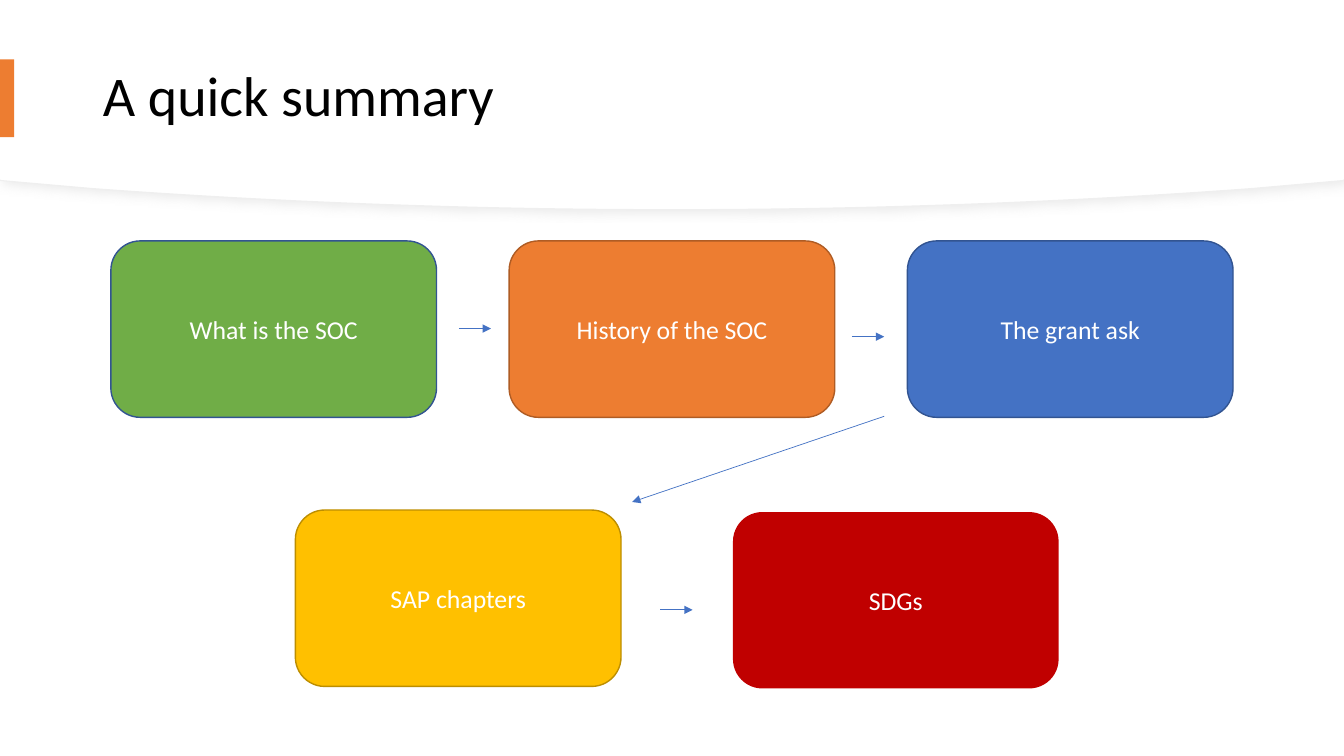
from lxml import etree
from pptx import Presentation
from pptx import util as u
from pptx.dml.color import RGBColor
from pptx.enum import shapes, text
from pptx.oxml.ns import qn

COLORS = {
    "white": "FFFFFF", "black": "000000", "edge": "EFEFEF", "shade": "D9D9D9",
    "orange": "ED7D31", "rust": "AF5C24", "green": "70AD47", "blue": "4472C4",
    "navy": "325491", "gold": "FFC000", "bronze": "BD8E00", "red": "C00000",
}
FONT = "Calibri"
WIDTH, HEIGHT = 13.33, 7.5
CARD_WIDTH, CARD_HEIGHT = 3.23, 1.75
COLUMN_LEFT, COLUMN_STEP = 1.1, 3.95
TOP_ROW, LOWER_ROW = 2.39, 5.06
CURVE_STEPS = 24


def color(name):
    return RGBColor.from_string(COLORS[name])


def paint(shape, fill, line=None, weight=1):
    shape.shadow.inherit = False
    shape.fill.solid()
    shape.fill.fore_color.rgb = color(fill)
    if line:
        shape.line.color.rgb = color(line)
        shape.line.width = u.Pt(weight)
    else:
        shape.line.fill.background()


def write(para, words, size, ink):
    span = para.add_run()
    span.text = words
    span.font.name = FONT
    span.font.size = u.Pt(size)
    span.font.color.rgb = color(ink)


def bezier(points):
    for step in range(1, CURVE_STEPS + 1):
        t = step / CURVE_STEPS
        weights = ((1 - t) ** 3, 3 * t * (1 - t) ** 2, 3 * t * t * (1 - t), t ** 3)
        yield tuple(sum(w * p[axis] for w, p in zip(weights, points)) for axis in (0, 1))


def add_header(page, depth):
    middle = (WIDTH / 2, depth)
    shoulder = (12.42, depth - 0.21)
    right = [shoulder, (10.65, depth - 0.08), (8.71, depth), middle]
    half = [(WIDTH, 0), (WIDTH, depth - 0.29), shoulder, *bezier(right)]
    mirrored = [(WIDTH - x, y) for x, y in reversed(half[:-1])]
    outline = [(u.Inches(x), u.Inches(y)) for x, y in half + mirrored]
    builder = page.shapes.build_freeform(*outline[0])
    builder.add_line_segments(outline[1:], close=True)
    header = builder.convert_to_shape()
    page.shapes.title.element.addprevious(header.element)
    return header


def add_soft_shadow(shape):
    effects = shape.element.spPr.find(qn("a:effectLst"))
    shadow = etree.SubElement(
        effects, qn("a:outerShdw"), blurRad=str(u.Pt(7)), dist=str(u.Pt(3)),
        dir="2700000", algn="tl", rotWithShape="0")
    tint = etree.SubElement(shadow, qn("a:srgbClr"), val=COLORS["shade"])
    etree.SubElement(tint, qn("a:alpha"), val="50000")


def add_title(page, words):
    title = page.shapes.title
    title.left, title.top = u.Inches(0.92), u.Inches(0.28)
    title.width, title.height = u.Inches(11.5), u.Inches(1.39)
    title.text_frame.vertical_anchor = text.MSO_ANCHOR.MIDDLE
    para = title.text_frame.paragraphs[0]
    para.alignment = text.PP_ALIGN.LEFT
    para.line_spacing = 0.9
    write(para, words, 40, "black")


def add_block(page, kind, left, top, width, height):
    return page.shapes.add_shape(kind, *map(u.Inches, (left, top, width, height)))


def add_card(page, left, top, words, fill, line):
    card = add_block(page, shapes.MSO_SHAPE.ROUNDED_RECTANGLE,
                     left, top, CARD_WIDTH, CARD_HEIGHT)
    paint(card, fill, line)
    card.text_frame.word_wrap = True
    card.text_frame.vertical_anchor = text.MSO_ANCHOR.MIDDLE
    para = card.text_frame.paragraphs[0]
    para.alignment = text.PP_ALIGN.CENTER
    para.space_after = u.Pt(6)
    write(para, words, 18.4, "white")


def add_arrow(page, start, end):
    arrow = page.shapes.add_connector(
        shapes.MSO_CONNECTOR.STRAIGHT, *map(u.Inches, (*start, *end)))
    arrow.line.color.rgb = color("blue")
    arrow.line.width = u.Pt(0.5)
    properties = arrow.element.spPr
    etree.SubElement(properties.find(qn("a:ln")), qn("a:tailEnd"), type="triangle")
    etree.SubElement(properties, qn("a:effectLst"))


def main():
    deck = Presentation()
    deck.slide_width, deck.slide_height = u.Inches(WIDTH), u.Inches(HEIGHT)
    page = deck.slides.add_slide(deck.slide_layouts[5])

    rim = add_header(page, 2.08)
    paint(rim, "white", "edge", 0.75)
    add_soft_shadow(rim)
    paint(add_header(page, 2.07), "white")
    add_title(page, "A quick summary")
    paint(add_block(page, shapes.MSO_SHAPE.RECTANGLE, 0, 0.59, 0.14, 0.77), "orange")

    top_cards = [
        ("What is the SOC", "green", "navy"),
        ("History of the SOC", "orange", "rust"),
        ("The grant ask", "blue", "navy"),
    ]
    for column, card in enumerate(top_cards):
        add_card(page, COLUMN_LEFT + column * COLUMN_STEP, TOP_ROW, *card)
    add_card(page, 2.93, LOWER_ROW, "SAP chapters", "gold", "bronze")
    add_card(page, 7.27, LOWER_ROW + 0.02, "SDGs", "red", None)

    for left, top in ((4.55, 3.26), (8.45, 3.34), (6.55, 6.05)):
        add_arrow(page, (left, top), (left + 0.32, top))
    add_arrow(page, (8.77, 4.13), (6.27, 4.98))

    deck.save("out.pptx")


if __name__ == "__main__":
    main()
